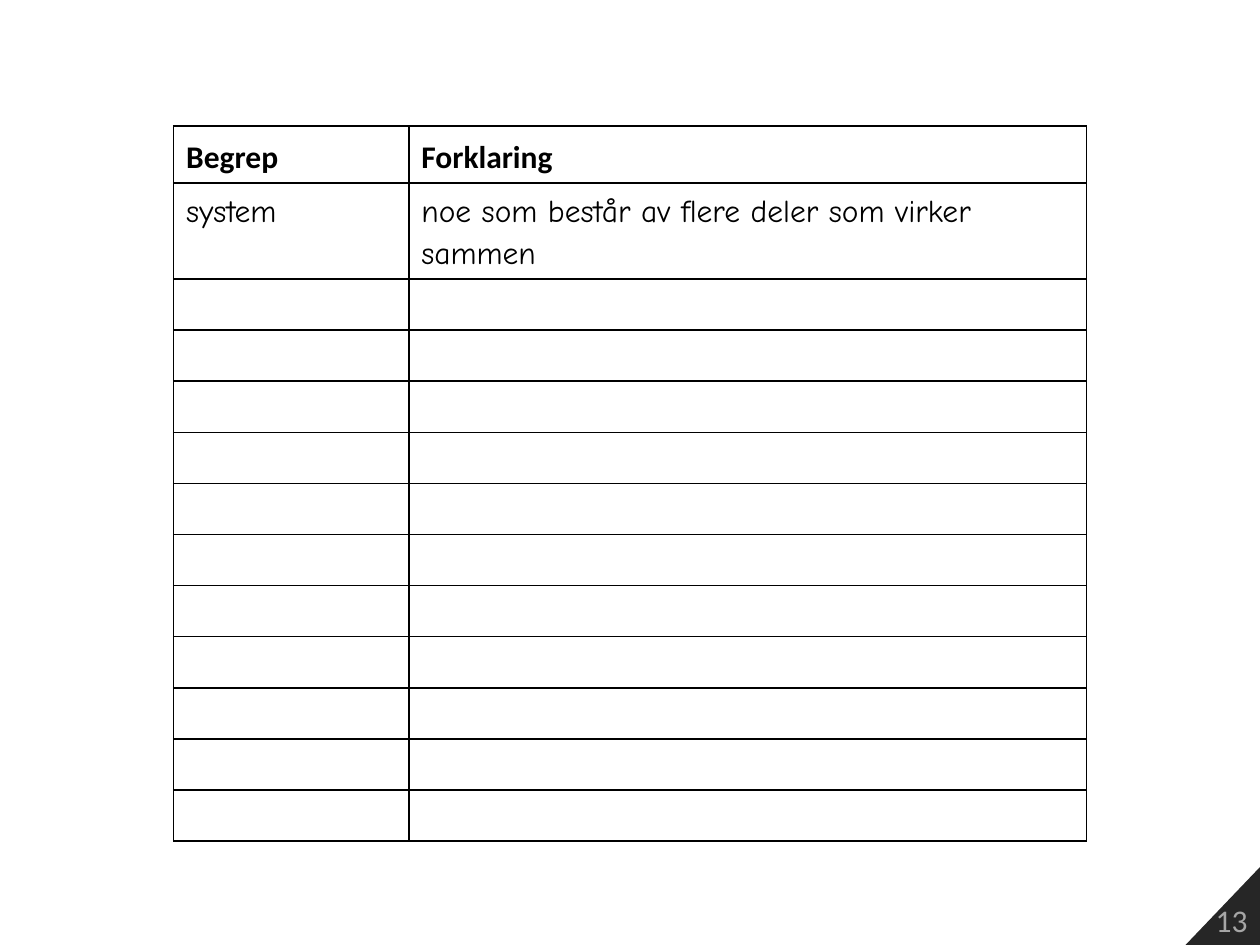
from lxml.etree import SubElement
from pptx import Presentation
from pptx.dml.color import RGBColor
from pptx.enum.text import MSO_ANCHOR, PP_ALIGN
from pptx.oxml.ns import qn
from pptx.util import Cm, Pt


def color(hex_string):
    return RGBColor.from_string(hex_string)


class SlideBuilder:
    body_font = "Calibri"
    answer_font = "Comic Neue"
    font_size = Pt(18)
    ink = "000000"
    corner_fill = "262626"
    corner_text = "A6A6A6"

    def __init__(self, slide):
        self.slide = slide

    def add_run(self, paragraph, text, font, hex_color, bold=False):
        run = paragraph.add_run()
        run.text = text
        run.font.name = font
        run.font.size = self.font_size
        run.font.bold = bold
        run.font.color.rgb = color(hex_color)

    def add_page_corner(self, number, corners):
        points = [(Cm(x), Cm(y)) for x, y in corners]
        builder = self.slide.shapes.build_freeform(*points[0])
        builder.add_line_segments(points[1:], close=True)
        shape = builder.convert_to_shape()
        shape.shadow.inherit = False
        shape.fill.solid()
        shape.fill.fore_color.rgb = color(self.corner_fill)
        shape.line.fill.background()
        shape.text_frame.vertical_anchor = MSO_ANCHOR.BOTTOM
        paragraph = shape.text_frame.paragraphs[0]
        paragraph.alignment = PP_ALIGN.RIGHT
        self.add_run(paragraph, number, self.body_font, self.corner_text)

    def style_cell(self, cell):
        properties = cell._tc.get_or_add_tcPr()
        for side in ("lnL", "lnR", "lnT", "lnB"):
            border = SubElement(properties, qn(f"a:{side}"), w=str(Pt(1)))
            fill = SubElement(border, qn("a:solidFill"))
            SubElement(fill, qn("a:srgbClr"), val=self.ink)
        cell.fill.background()

    def add_glossary(self, left, top, column_widths, row_height, row_count, entries):
        table = self.slide.shapes.add_table(
            row_count, len(column_widths), Cm(left), Cm(top),
            Cm(sum(column_widths)), Cm(row_height * row_count)).table
        table.first_row = False
        table.horz_banding = False
        for column, width in zip(table.columns, column_widths):
            column.width = Cm(width)
        for row in table.rows:
            row.height = Cm(row_height)
        for cell in table.iter_cells():
            self.style_cell(cell)

        # Header and filled rows; the others stay open for the pupils
        for row_index, entry in enumerate(entries):
            is_header = row_index == 0
            font = self.body_font if is_header else self.answer_font
            for column_index, text in enumerate(entry):
                cell = table.cell(row_index, column_index)
                if is_header:
                    cell.vertical_anchor = MSO_ANCHOR.MIDDLE
                paragraph = cell.text_frame.paragraphs[0]
                paragraph.line_spacing = 1.15
                self.add_run(paragraph, text, font, self.ink, bold=is_header)


def main():
    presentation = Presentation()
    presentation.slide_width = Cm(25.4)
    presentation.slide_height = Cm(19.05)
    slide = presentation.slides.add_slide(presentation.slide_layouts[6])
    builder = SlideBuilder(slide)

    # Page number in the corner
    builder.add_page_corner("13", [(23.9, 19.05), (25.4, 17.48), (25.4, 19.05)])

    # Glossary table
    builder.add_glossary(
        left=3.5, top=2.54, column_widths=[4.74, 13.66],
        row_height=1.03, row_count=13,
        entries=[
            ("Begrep", "Forklaring"),
            ("system", "noe som består av flere deler som virker sammen"),
        ])

    presentation.save("out.pptx")


if __name__ == "__main__":
    main()
